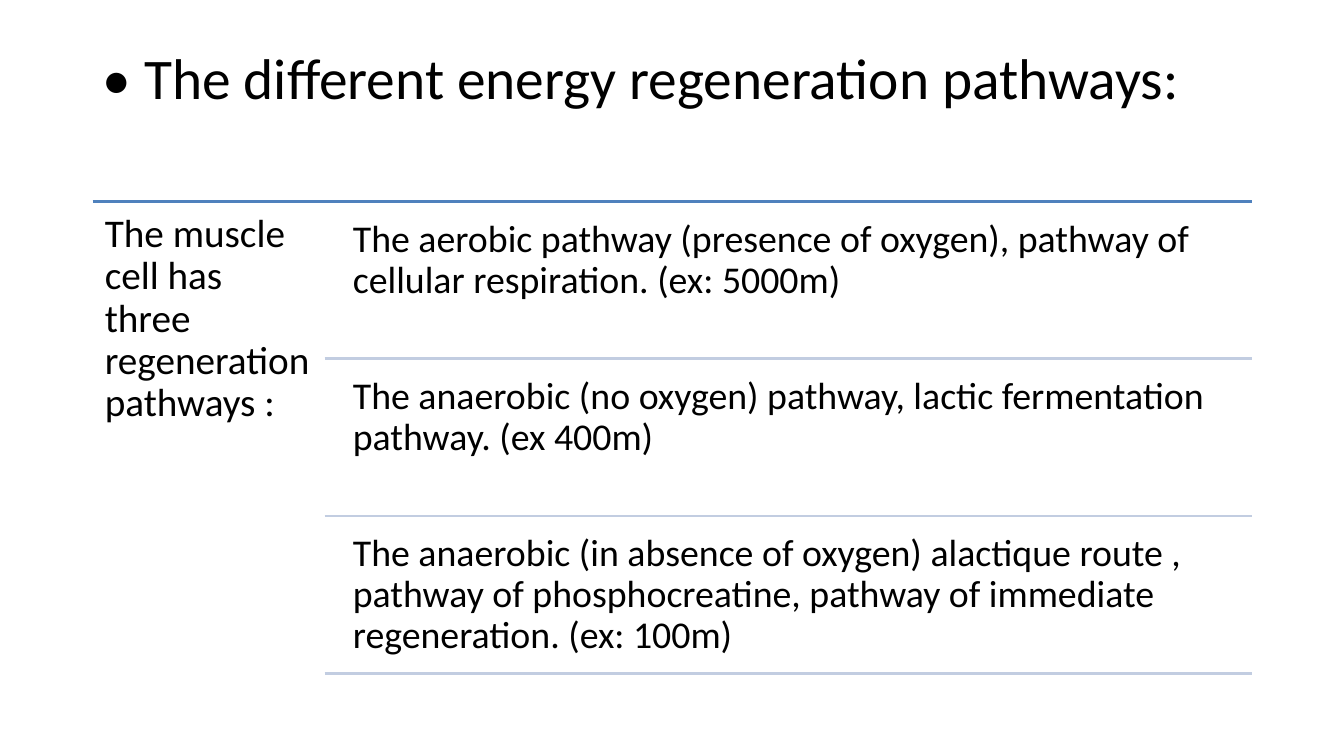
from dataclasses import dataclass

from lxml.etree import SubElement as SubEl
from pptx import Presentation
from pptx.dml.color import RGBColor as Rgb
from pptx.enum.shapes import MSO_CONNECTOR as Conn
from pptx.enum.text import MSO_ANCHOR as Anchor
from pptx.oxml.ns import qn
from pptx.util import Inches, Pt


@dataclass(frozen=True)
class Theme:
    font: str = "Calibri"
    ink: str = "000000"
    main: str = "4F81BD"
    pale: str = "C2CDE1"
    title: float = 41
    lead: float = 28
    body: float = 27
    rule: float = 2


THEME = Theme()
LEFT, RIGHT = 0.92, 12.42
SPLIT = 3.22
TOP, STEP = 2, 1.56
PATHWAYS = (
    "The aerobic pathway (presence of oxygen), pathway of cellular respiration. (ex: 5000m)",
    "The anaerobic (no oxygen) pathway, lactic fermentation pathway. (ex 400m)",
    "The anaerobic (in absence of oxygen) alactique route , pathway of phosphocreatine, "
    "pathway of immediate regeneration. (ex: 100m)",
)


def add_text(slide, text, box, size, inset, after=0):
    frame = slide.shapes.add_textbox(*map(Inches, box)).text_frame
    frame.word_wrap = True
    frame.vertical_anchor = Anchor.TOP
    frame.margin_left = frame.margin_right = Inches(inset)
    frame.margin_top = frame.margin_bottom = Inches(inset)
    frame.text = text
    para = frame.paragraphs[0]
    para.line_spacing = 0.9
    para.space_after = Pt(after)
    font = para.runs[0].font
    font.name = THEME.font
    font.size = Pt(size)
    font.color.rgb = Rgb.from_string(THEME.ink)


def add_rule(slide, left, top, color):
    ends = map(Inches, (left, top, RIGHT, top))
    rule = slide.shapes.add_connector(Conn.STRAIGHT, *ends)
    rule.line.color.rgb = Rgb.from_string(color)
    rule.line.width = Pt(THEME.rule)
    SubEl(rule._element.spPr, qn("a:effectLst"))


def add_row(slide, index, text):
    top = TOP + index * STEP
    left = SPLIT + 0.17
    box = (left, top + 0.07, RIGHT - left, STEP - 0.07)
    add_text(slide, text, box, THEME.body, 0.11, 9.4)
    add_rule(slide, SPLIT, top + STEP, THEME.pale)


def main():
    deck = Presentation()
    deck.slide_width, deck.slide_height = Inches(13.33), Inches(7.5)
    slide = deck.slides.add_slide(deck.slide_layouts[6])
    add_text(slide, "• The different energy regeneration pathways:",
             (LEFT, 0.4, RIGHT - LEFT, 1.45), THEME.title, 0.1)
    add_rule(slide, LEFT, TOP, THEME.main)
    add_text(slide, "The muscle cell has three regeneration pathways :",
             (LEFT, TOP, SPLIT - LEFT, 4.76), THEME.lead, 0.12, 9.8)
    for index, text in enumerate(PATHWAYS):
        add_row(slide, index, text)
    deck.save("out.pptx")


if __name__ == "__main__":
    main()
